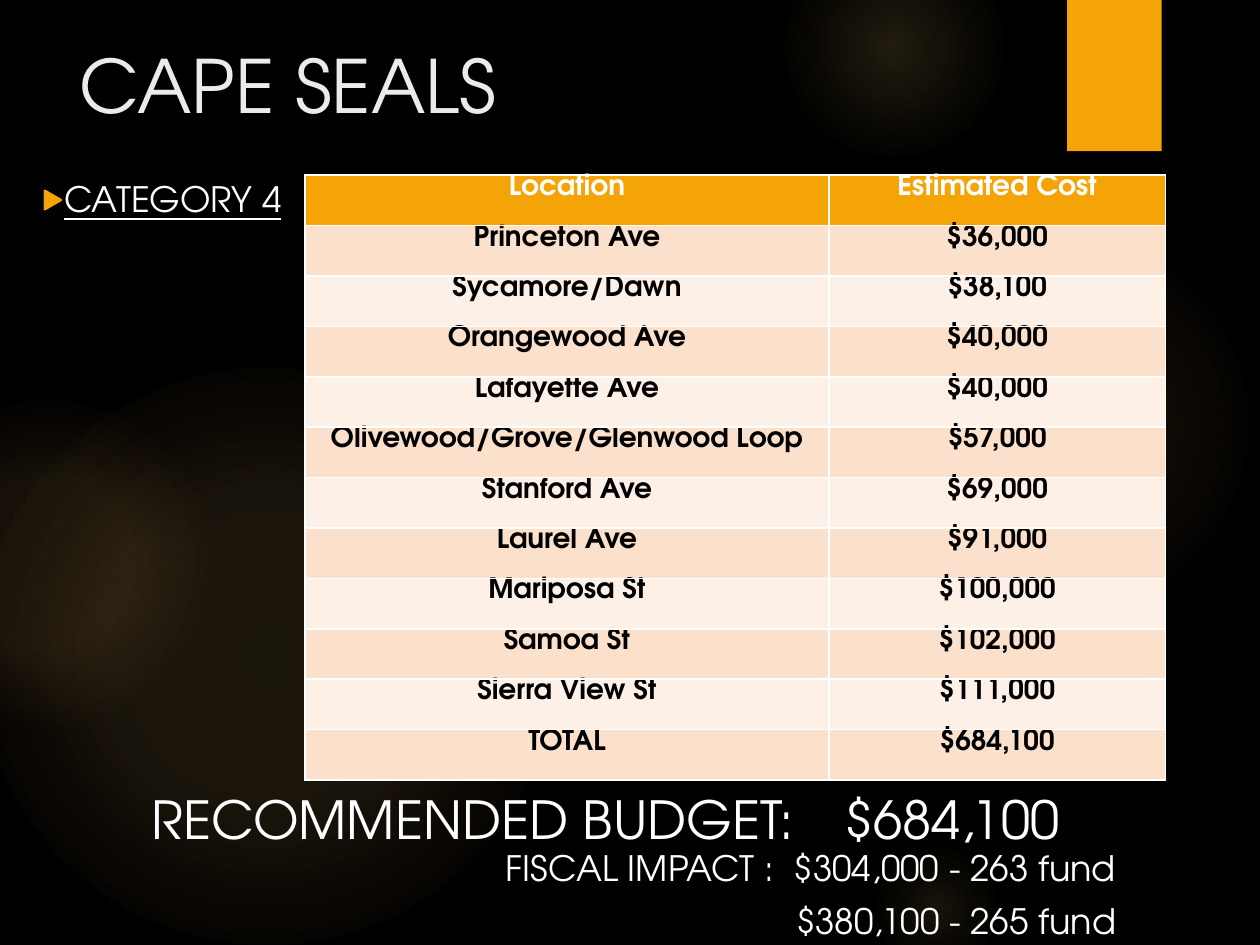
"""Build the cape seals budget slide."""
from dataclasses import dataclass

from lxml.etree import SubElement
from pptx import Presentation
from pptx.dml.color import RGBColor
from pptx.enum.shapes import MSO_SHAPE as Preset
from pptx.enum.text import MSO_ANCHOR as Anchor, MSO_AUTO_SIZE as Fit, PP_ALIGN as Align
from pptx.oxml.ns import qn
from pptx.util import Inches, Pt


@dataclass(frozen=True)
class Theme:
    """Colours, typeface and type sizes of the slide."""
    font: str = "TeX Gyre Adventor"
    background: str = "000000"
    accent: str = "F5A408"
    glow: str = "FAC96A"
    heading: str = "EBEBEB"
    light: str = "FFFFFF"
    dark: str = "000000"
    bands: tuple = ("FBE0CC", "FDF0E7")
    title_size: int = 42
    budget_size: int = 30
    text_size: int = 20
    table_size: int = 16


class BudgetSlide:
    """Draw themed elements on a grid of 100 columns by 75 rows."""

    def __init__(self, deck, theme):
        """Add a title and content slide with a plain background."""
        self.theme = theme
        self.column = deck.slide_width / 100
        self.row = deck.slide_height / 75
        self.slide = deck.slides.add_slide(deck.slide_layouts[1])
        self.paint(self.slide.background.fill, theme.background)

    def area(self, left, top, width, height):
        """Turn grid units into slide lengths."""
        return (round(left * self.column), round(top * self.row),
                round(width * self.column), round(height * self.row))

    def paint(self, fill, color):
        """Apply a solid fill."""
        fill.solid()
        fill.fore_color.rgb = RGBColor.from_string(color)

    def format(self, paragraph, size, color, align=Align.LEFT, **styles):
        """Format a paragraph and its runs."""
        paragraph.alignment = align
        for run in paragraph.runs:
            run.font.name = self.theme.font
            run.font.size = Pt(size)
            run.font.color.rgb = RGBColor.from_string(color)
            for style, value in styles.items():
                setattr(run.font, style, value)

    def preset(self, kind, area):
        """Add a preset shape without line or shadow."""
        shape = self.slide.shapes.add_shape(kind, *self.area(*area))
        shape.shadow.inherit = False
        shape.line.fill.background()
        return shape

    def glow(self, left, top, diameter, stops):
        """Add a soft circle from (position, opacity) percentages."""
        circle = self.preset(Preset.OVAL, (left, top, diameter, diameter))
        circle.fill.gradient()
        gradient = circle.element.spPr.find(qn("a:gradFill"))
        for part in list(gradient):
            gradient.remove(part)
        stop_list = SubElement(gradient, qn("a:gsLst"))
        for position, opacity in stops:
            stop = SubElement(stop_list, qn("a:gs"), pos=str(position * 1000))
            color = SubElement(stop, qn("a:srgbClr"), val=self.theme.glow)
            SubElement(color, qn("a:alpha"), val=str(opacity * 1000))
        center = SubElement(gradient, qn("a:path"), path="circle")
        SubElement(center, qn("a:fillToRect"), l="50000", t="50000", r="50000", b="50000")

    def ribbon(self, *area):
        """Add an accent block."""
        self.paint(self.preset(Preset.RECTANGLE, area).fill, self.theme.accent)

    def placeholder(self, index, text, area):
        """Fill a template placeholder and bring it above the backdrop."""
        holder = self.slide.placeholders[index]
        holder.left, holder.top, holder.width, holder.height = self.area(*area)
        frame = holder.text_frame
        frame.text = text
        frame.auto_size = Fit.NONE
        frame.vertical_anchor = Anchor.TOP
        holder.element.getparent().append(holder.element)
        return frame.paragraphs[0]

    def title(self, text, *area):
        """Set the slide title."""
        heading = self.placeholder(0, text, area)
        self.format(heading, self.theme.title_size, self.theme.heading)

    def category(self, text, *area):
        """Set the underlined category with an arrow bullet."""
        item = self.placeholder(1, text, area)
        self.format(item, self.theme.text_size, self.theme.light, underline=True)
        item.line_spacing = 0.9
        item.space_before = Pt(10)
        properties = item._p.get_or_add_pPr()
        hanging = Inches(0.14)
        properties.set("marL", str(hanging))
        properties.set("indent", str(-hanging))
        bullet_color = SubElement(properties, qn("a:buClr"))
        SubElement(bullet_color, qn("a:srgbClr"), val=self.theme.accent)
        SubElement(properties, qn("a:buSzPct"), val="80000")
        SubElement(properties, qn("a:buFont"), typeface=self.theme.font)
        SubElement(properties, qn("a:buChar"), char="▶")

    def note(self, text, size, align, *area, right_inset=1):
        """Add a wrapped text box."""
        frame = self.slide.shapes.add_textbox(*self.area(*area)).text_frame
        frame.word_wrap = True
        frame.margin_right = round(right_inset * self.column)
        frame.text = text
        for paragraph in frame.paragraphs:
            paragraph.space_after = Pt(6)
            self.format(paragraph, size, self.theme.light, align)

    def cell(self, cell, text, fill, color):
        """Fill and frame one table cell."""
        cell.text = text
        cell.margin_top = cell.margin_bottom = 0
        cell.margin_left = cell.margin_right = Inches(0.07)
        self.format(cell.text_frame.paragraphs[0], self.theme.table_size, color,
                    Align.CENTER, bold=True)
        properties = cell._tc.get_or_add_tcPr()
        for side in "LRTB":
            border = SubElement(properties, qn(f"a:ln{side}"), w=str(Pt(1)))
            line_fill = SubElement(border, qn("a:solidFill"))
            SubElement(line_fill, qn("a:srgbClr"), val=self.theme.light)
        self.paint(cell.fill, fill)

    def table(self, records, widths, left, top, row_height):
        """Add a banded table whose first record is the header."""
        area = self.area(left, top, sum(widths), row_height * len(records))
        grid = self.slide.shapes.add_table(len(records), len(widths), *area).table
        for column, width in zip(grid.columns, widths):
            column.width = round(width * self.column)
        for index, record in enumerate(records):
            fill = self.theme.bands[(index - 1) % 2] if index else self.theme.accent
            color = self.theme.dark if index else self.theme.light
            for cell, text in zip(grid.rows[index].cells, record):
                self.cell(cell, text, fill, color)


GLOWS = [
    (68.9, 18.3, 30.8, [(0, 7), (36, 6), (69, 0)]),
    (62.2, -5, 17.5, [(0, 14), (36, 7), (73, 0)]),
    (68.9, 66.7, 10.8, [(0, 10), (31, 5), (66, 0)]),
    (-1.7, 29.2, 45.8, [(0, 11), (36, 10), (75, 0)]),
    (-9.2, 31.7, 25.8, [(0, 8), (36, 8), (72, 0)]),
]
STREETS = [
    ("Location", "Estimated Cost"),
    ("Princeton Ave", "$36,000"),
    ("Sycamore/Dawn", "$38,100"),
    ("Orangewood Ave", "$40,000"),
    ("Lafayette Ave", "$40,000"),
    ("Olivewood/Grove/Glenwood Loop", "$57,000"),
    ("Stanford Ave", "$69,000"),
    ("Laurel Ave", "$91,000"),
    ("Mariposa St", "$100,000"),
    ("Samoa St", "$102,000"),
    ("Sierra View St", "$111,000"),
    ("TOTAL", "$684,100"),
]


def main():
    """Compose and save the slide."""
    deck = Presentation()
    deck.slide_width, deck.slide_height = Inches(10), Inches(7.5)
    theme = Theme()
    page = BudgetSlide(deck, theme)
    for glow in GLOWS:
        page.glow(*glow)
    page.ribbon(84.7, 0, 7.5, 12)
    page.title("CAPE SEALS", 5.3, 2.7, 75.9, 11.1)
    page.category("CATEGORY 4", 2.3, 14, 45.8, 5.3)
    page.note("RECOMMENDED BUDGET: \t$684,100", theme.budget_size, Align.CENTER,
              5.3, 62, 85.5, 6.1)
    page.table(STREETS, (41.6, 26.7), 24.2, 13.9, 4)
    page.note("FISCAL IMPACT :  $304,000 - 263 fund\n$380,100 - 265 fund",
              theme.text_size, Align.RIGHT, 26.5, 66.7, 73.5, 8.6, right_inset=11.4)
    deck.save("out.pptx")


if __name__ == "__main__":
    main()
